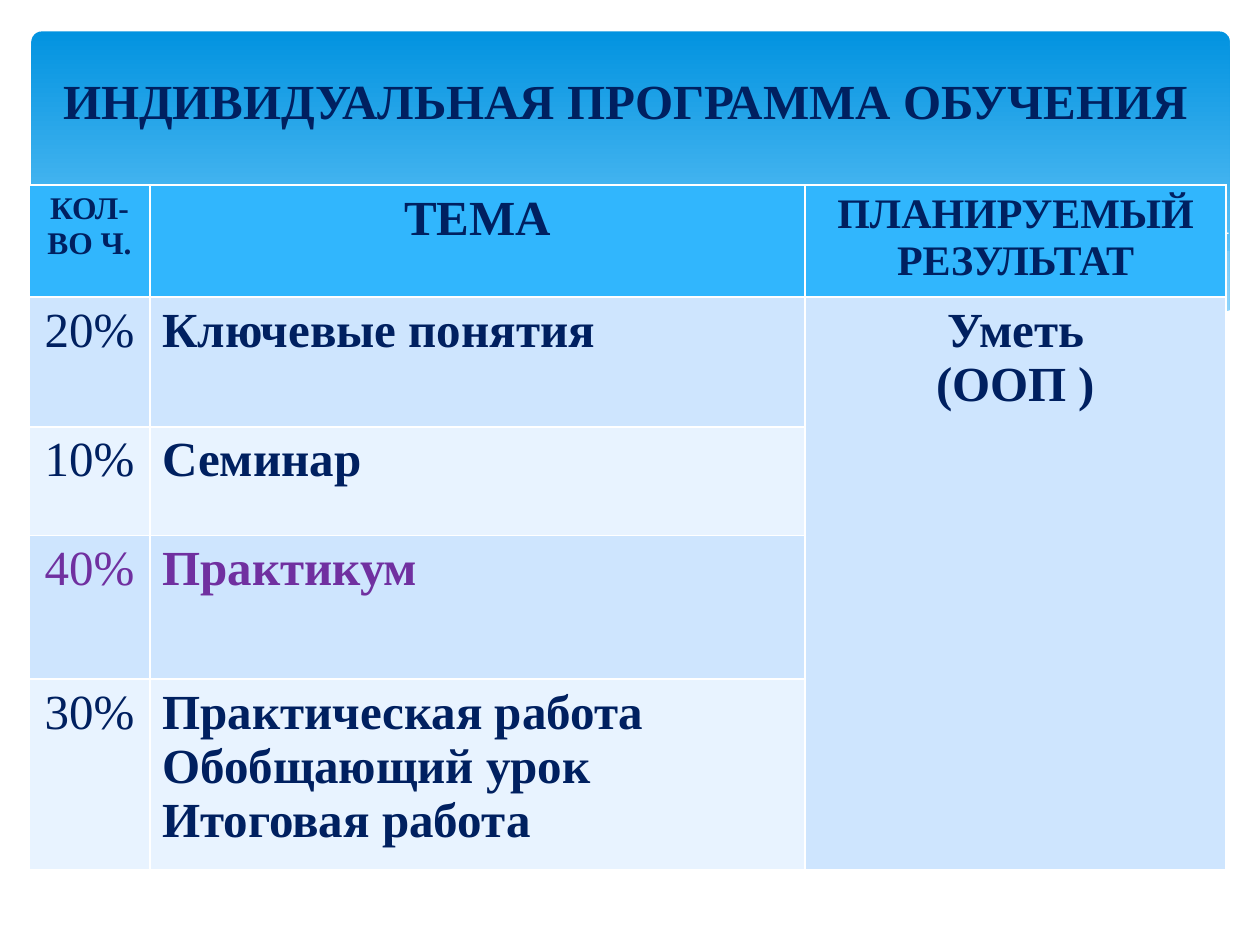
"""Build the slide with the individual study programme table."""
from lxml import etree
from pptx import Presentation
from pptx.dml.color import RGBColor
from pptx.enum.shapes import MSO_SHAPE
from pptx.enum.text import MSO_ANCHOR, PP_ALIGN
from pptx.oxml.ns import qn
from pptx.util import Pt

ROUND = MSO_SHAPE.ROUNDED_RECTANGLE
MIDDLE = MSO_ANCHOR.MIDDLE
LEFT, CENTER = PP_ALIGN.LEFT, PP_ALIGN.CENTER

FONT = "Times New Roman"
COLORS = {
    "navy": "002060", "violet": "7030A0", "white": "FFFFFF",
    "top": "0293E0", "low": "83D3FE", "mist": "C6E7FC",
    "head": "31B6FD", "odd": "CEE5FE", "even": "E8F3FF",
}

TITLE = "ИНДИВИДУАЛЬНАЯ ПРОГРАММА ОБУЧЕНИЯ"
HEADS = [("КОЛ-ВО Ч.", 18), ("ТЕМА", 28), ("ПЛАНИРУЕМЫЙ РЕЗУЛЬТАТ", 24)]
TOPICS = [
    ("20%", ["Ключевые понятия"], "navy"),
    ("10%", ["Семинар"], "navy"),
    ("40%", ["Практикум"], "violet"),
    ("30%", ["Практическая работа", "Обобщающий урок", "Итоговая работа"], "navy"),
]
RESULT = ["Уметь", "(ООП )"]
WIDTHS = [69, 374.5, 240.5]
HEIGHTS = [64, 74.2, 62, 82.1, 109]

MIST = [(702, 143.3), (652.3, 153.2), (599, 165.6), (542, 178.6), (475.9, 190.8),
        (527, 196.6), (578.2, 199.9), (635, 197.4), (683.3, 185), (702.7, 177.8),
        (702.7, 143.3)]
CREST = [(441.4, 185), (500.4, 169.2), (558.7, 155.5), (623.5, 143.3),
         (675.4, 135.4), (702, 133.2)]
SNOW = [(703.4, 177.1), (669.6, 188.6), (630, 196.6), (582.5, 199.4), (522.7, 195.8),
        (465.8, 188.6), (399.6, 176.4), (321.8, 158.4), (244.1, 141.8), (180, 133.9),
        (127.4, 132.5), (85.7, 134.6), (48.2, 141.8), (16.6, 153.4), (16.6, 236.9),
        (703.4, 236.9)]


def tint(name):
    return RGBColor.from_string(COLORS[name])


def write(frame, lines, size, align, color="navy", bold=True):
    frame.text = "\n".join(lines)
    for para in frame.paragraphs:
        para.alignment = align
        font = para.font
        font.name, font.size, font.bold = FONT, Pt(size), bold
        font.color.rgb = tint(color)


def paint(cell, name):
    cell.fill.solid()
    cell.fill.fore_color.rgb = tint(name)


def trace(shapes, points, close=True):
    spots = [(Pt(x), Pt(y)) for x, y in points]
    pen = shapes.build_freeform(*spots[0])
    pen.add_line_segments(spots[1:], close=close)
    shape = pen.convert_to_shape()
    shape.shadow.inherit = False
    return shape


def fill_wave(shapes, points, name, alpha=100):
    wave = trace(shapes, points)
    wave.line.fill.background()
    wave.fill.solid()
    wave.fill.fore_color.rgb = tint(name)
    if alpha < 100:
        color = next(wave._element.spPr.iter(qn("a:srgbClr")))
        etree.SubElement(color, qn("a:alpha"), val=str(alpha * 1000))


def add_band(shapes):
    band = shapes.add_shape(ROUND, Pt(18), Pt(18), Pt(684.7), Pt(194.4))
    band.adjustments[0] = 0.03
    band.shadow.inherit = False
    band.line.fill.background()
    band.fill.gradient()
    band.fill.gradient_angle = 270
    for stop, place, name in zip(band.fill.gradient_stops, (0, 0.9), ("top", "low")):
        stop.position = place
        stop.color.rgb = tint(name)
    fill_wave(shapes, MIST, "mist", 29)
    crest = trace(shapes, CREST, close=False)
    crest.fill.background()
    crest.line.color.rgb = tint("white")
    crest.line.width = Pt(0)
    fill_wave(shapes, SNOW, "white")


def add_plan(shapes):
    plan = shapes.add_table(len(HEIGHTS), len(WIDTHS), Pt(16.6), Pt(105.8),
                            Pt(sum(WIDTHS)), Pt(sum(HEIGHTS))).table
    for col, width in zip(plan.columns, WIDTHS):
        col.width = Pt(width)
    for row, height in zip(plan.rows, HEIGHTS):
        row.height = Pt(height)
    for i, (text, size) in enumerate(HEADS):
        cell = plan.cell(0, i)
        write(cell.text_frame, [text], size, CENTER)
        paint(cell, "head")
    for i, (share, topic, color) in enumerate(TOPICS, 1):
        write(plan.cell(i, 0).text_frame, [share], 28, CENTER, color, False)
        write(plan.cell(i, 1).text_frame, topic, 28, LEFT, color)
        for j in (0, 1):
            paint(plan.cell(i, j), "odd" if i % 2 else "even")
    goal = plan.cell(1, 2)
    goal.merge(plan.cell(len(TOPICS), 2))
    write(goal.text_frame, RESULT, 28, CENTER)
    paint(goal, "odd")


def main():
    deck = Presentation()
    deck.slide_width, deck.slide_height = Pt(720), Pt(540)
    shapes = deck.slides.add_slide(deck.slide_layouts[6]).shapes
    add_band(shapes)
    add_plan(shapes)
    frame = shapes.add_textbox(Pt(14.4), Pt(26), Pt(686), Pt(62.6)).text_frame
    frame.word_wrap = True
    frame.vertical_anchor = MIDDLE
    write(frame, [TITLE], 28, CENTER)
    deck.save("out.pptx")


if __name__ == "__main__":
    main()
